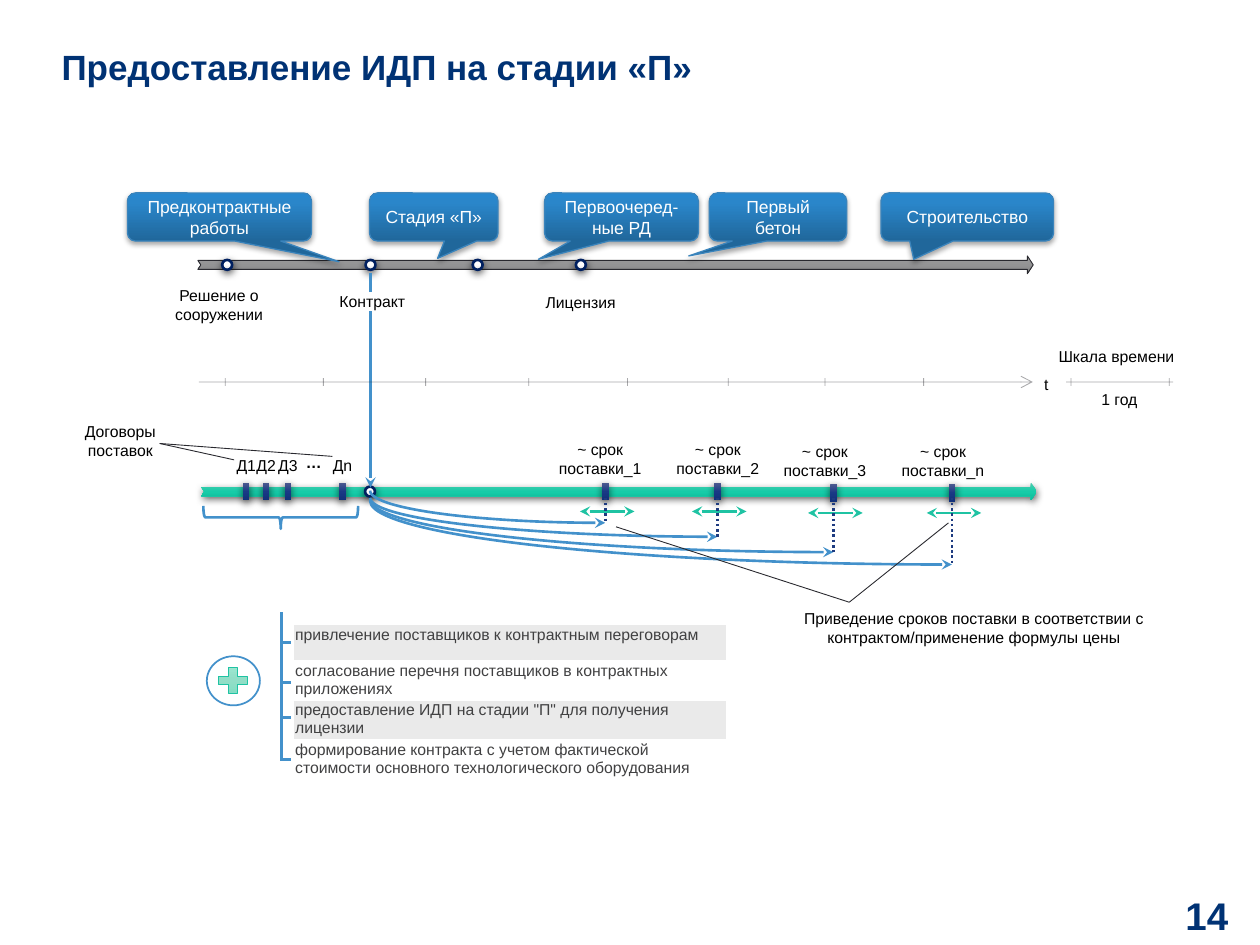
import pptx
import pptx.dml.color
import pptx.enum.dml
import pptx.enum.shapes
import pptx.enum.text
import pptx.oxml.ns
import pptx.util
from lxml import etree

Cm = pptx.util.Cm
Pt = pptx.util.Pt
qn = pptx.oxml.ns.qn
KIND = pptx.enum.shapes.MSO_SHAPE
ALIGN = pptx.enum.text.PP_ALIGN
ANCHOR = pptx.enum.text.MSO_ANCHOR

COLORS = {"title": "003274", "text": "000000", "white": "FFFFFF", "ink": "29292F",
          "navy": "002060", "blue": "4391CB", "callout": "3A84BC", "teal": "1FC3A3",
          "dots": "1E3B80", "cell_text": "414142", "band": "EAEAEA"}
GRADIENTS = {
    "gray": (90, [(0, "A0A0A1"), (50, "939394"), (100, "808081")]),
    "dot": (90, [(0, "FFFFFF"), (50, "FFFFFF"), (100, "E3E3E3")]),
    "callout": (270, [(0, "20679B"), (80, "2A86CA"), (100, "2787CE")]),
    "teal": (90, [(0, "4ECDAF"), (50, "17CBA8"), (100, "0DBC9A")]),
    "mark": (90, [(0, "4E5B90"), (50, "193985"), (100, "12317A")]),
    "plus": (90, [(0, "9EE8D2"), (50, "92DEC7"), (100, "7DDDC2")]),
}
DEEP_SHADOW = (63, 4.5, 1.5)
SOFT_SHADOW = (35, 3.1, 1.8)


def rgb(name):
    return pptx.dml.color.RGBColor.from_string(COLORS[name])


def add_color(parent, value, alpha=None):
    color = etree.SubElement(parent, qn("a:srgbClr"), val=value)
    if alpha:
        etree.SubElement(color, qn("a:alpha"), val=str(alpha * 1000))


def write(shape, text, size=9, color="text", bold=False, align=ALIGN.CENTER,
          anchor=ANCHOR.TOP, wrap=True, inset=0):
    frame = shape.text_frame
    frame.text = text
    frame.word_wrap = wrap
    frame.vertical_anchor = anchor
    if inset is not None:
        frame.margin_left = frame.margin_right = Cm(inset)
        frame.margin_top = frame.margin_bottom = Cm(inset)
    for para in frame.paragraphs:
        para.alignment = align
        for span in para.runs:
            span.font.name = "Arial"
            span.font.size = Pt(size)
            span.font.bold = bold
            span.font.color.rgb = rgb(color)


def add_label(page, left, top, width, text, height=0.38, **style):
    box = page.shapes.add_textbox(Cm(left), Cm(top), Cm(width), Cm(height))
    write(box, text, **style)
    return box


def add_ends(line_xml, head, tail):
    for tag, end in (("a:headEnd", head), ("a:tailEnd", tail)):
        if end:
            etree.SubElement(line_xml, qn(tag), type=end)


def add_shape(page, kind, left, top, width, height, gradient=None, line=None,
              weight=0.5, shadow=None, head=None):
    shape = page.shapes.add_shape(kind, Cm(left), Cm(top), Cm(width), Cm(height))
    shape.shadow.inherit = False
    properties = shape._element.spPr
    if gradient:
        angle, stops = GRADIENTS[gradient]
        shape.fill.gradient()
        stop_list = properties.find(".//" + qn("a:gsLst"))
        for old_stop in list(stop_list):
            stop_list.remove(old_stop)
        for position, value in stops:
            add_color(etree.SubElement(stop_list, qn("a:gs"), pos=str(position * 1000)), value)
        properties.find(".//" + qn("a:lin")).set("ang", str(angle * 60000))
    else:
        shape.fill.background()
    if line:
        shape.line.color.rgb = rgb(line)
        shape.line.width = Pt(weight)
        add_ends(properties.find(qn("a:ln")), head, None)
    else:
        shape.line.fill.background()
    if shadow:
        alpha, blur, distance = shadow
        outer = etree.SubElement(properties.find(qn("a:effectLst")), qn("a:outerShdw"),
                                 blurRad=str(Pt(blur)), dist=str(Pt(distance)),
                                 dir="5400000", rotWithShape="0")
        add_color(outer, "000000", alpha)
    return shape


def add_line(page, x1, y1, x2, y2, color="ink", weight=0.5, head=None, tail=None,
             dotted=False, alpha=None):
    line = page.shapes.add_connector(pptx.enum.shapes.MSO_CONNECTOR.STRAIGHT,
                                     Cm(x1), Cm(y1), Cm(x2), Cm(y2))
    line.line.color.rgb = rgb(color)
    line.line.width = Pt(weight)
    if dotted:
        line.line.dash_style = pptx.enum.dml.MSO_LINE.ROUND_DOT
    properties = line._element.spPr
    if alpha:
        etree.SubElement(properties.find(".//" + qn("a:srgbClr")), qn("a:alpha"),
                         val=str(alpha * 1000))
    add_ends(properties.find(qn("a:ln")), head, tail)
    etree.SubElement(properties, qn("a:effectLst"))


def add_dot(page, left, top):
    add_shape(page, KIND.OVAL, left, top, 0.2, 0.2, "dot", "navy", 1.5, DEEP_SHADOW)


def add_mark(page, center, top):
    add_shape(page, KIND.RECTANGLE, center - 0.06, top, 0.13, 0.36, "mark", shadow=DEEP_SHADOW)


def add_heading(page, left, top, width, height):
    title = page.shapes.title
    title.left, title.top, title.width, title.height = map(Cm, (left, top, width, height))
    write(title, "Предоставление ИДП на стадии «П»", 20, "title", True, ALIGN.LEFT, ANCHOR.MIDDLE)
    add_label(page, 23.01, 17.93, 1.75, "14", 1.04, size=22, color="title", bold=True,
              align=ALIGN.RIGHT, anchor=ANCHOR.MIDDLE)


def add_phases(page, left, top):
    add_shape(page, KIND.NOTCHED_RIGHT_ARROW, left + 1.42, top + 1.27, 16.84, 0.36,
              "gray", "ink").adjustments[1] = 0.33
    for x in (1.91, 4.8, 6.96, 9.04):
        add_dot(page, left + x, top + 1.35)
    add_label(page, left + 0.74, top + 1.88, 2.21, "Решение о сооружении", 0.76)
    add_label(page, left + 8.26, top + 2.01, 1.75, "Лицензия")
    for x, width, tip_x, tip_y, text in (
            (0, 3.71, 0.65, 0.93, "Предконтрактные работы"),
            (4.88, 2.59, 0.03, 0.86, "Стадия «П»"),
            (8.41, 3.1, -0.54, 0.88, "Первоочеред-ные РД"),
            (11.73, 2.77, -0.65, 0.81, "Первый бетон"),
            (15.19, 3.48, -0.31, 0.88, "Строительство")):
        callout = add_shape(page, KIND.ROUNDED_RECTANGULAR_CALLOUT, left + x, top, width, 0.97,
                            "callout", "callout", 0.75, SOFT_SHADOW)
        callout.adjustments[0] = tip_x
        callout.adjustments[1] = tip_y
        write(callout, text, 10, "white", anchor=ANCHOR.MIDDLE, inset=None)


def add_axis(page, left, y, width, ticks, tail=None):
    add_line(page, left, y, left + width, y, alpha=40, tail=tail)
    for x in ticks:
        add_line(page, left + x, y - 0.08, left + x, y + 0.08, alpha=40)


def add_time_scale(page, left, y, width):
    add_axis(page, left, y, width, (0.53, 2.51, 4.57, 6.65, 8.64, 10.67, 12.62, 14.61), "arrow")
    add_label(page, left + width + 0.11, y - 0.15, 0.33, "t")
    legend = left + width + 0.67
    add_axis(page, legend, y, 2.16, (0.1, 2.08))
    add_label(page, legend - 0.15, y - 0.71, 2.44, "Шкала времени", align=ALIGN.LEFT, wrap=False)
    add_label(page, legend + 0.2, y + 0.15, 1.75, "1 год")


def add_deliveries(page, left, top, width):
    add_shape(page, KIND.NOTCHED_RIGHT_ARROW, left, top, width, 0.36, "teal",
              shadow=DEEP_SHADOW).adjustments[1] = 0.33
    add_dot(page, left + 3.3, top + 0.08)
    for x, text in ((0.9, "Д1"), (1.3, "Д2"), (1.74, "Д3"), (2.84, "Дn")):
        add_mark(page, left + x, top)
        add_label(page, left + x - 0.2, top - 0.55, 0.41, text, wrap=False)
    add_label(page, left + 2.06, top - 0.61, 0.41, "…", bold=True, wrap=False)
    add_label(page, left - 2.51, top - 1.22, 1.75, "Договоры поставок", 0.76)
    for x, y in ((2.64, -0.53), (0.66, -0.46)):
        add_line(page, left - 0.84, top - 0.79, left + x, top + y)
    for x, label_x, shift, drop, arc_height, name in (
            (8.14, 8.04, 0, 0.81, 1.3, "1"), (10.4, 10.41, 0, 1.09, 1.57, "2"),
            (12.74, 12.57, 0.03, 1.4, 2.13, "3"), (15.13, 14.95, 0.03, 1.65, 2.57, "n")):
        add_mark(page, left + x, top + shift)
        add_label(page, left + label_x - 0.95, top - 0.86 + shift, 1.9,
                  "~ срок поставки_" + name, 0.76)
        add_line(page, left + x - 0.51, top + 0.58 + shift, left + x + 0.59, top + 0.58 + shift,
                 "teal", 1.5, "stealth", "stealth")
        arc = add_shape(page, KIND.ARC, left + 3.4, top + drop - arc_height, 2 * (x - 3.4),
                        arc_height, line="blue", weight=1.5, head="stealth")
        arc.rotation = 180
        add_line(page, left + x, top + 0.3, left + x, top + drop, "dots", 1.5, dotted=True)
    brace = add_shape(page, KIND.LEFT_BRACE, left + 1.37, top - 0.86, 0.46, 3.12,
                      line="blue", weight=1.5)
    brace.rotation = 270
    for x, y in ((8.36, 0.89), (15.06, 0.81)):
        add_line(page, left + x, top + y, left + 13.06, top + 2.41)
    add_label(page, left + 11.81, top + 2.54, 7.52, "Приведение сроков поставки в соответствии "
              "с контрактом/применение формулы цены", 0.76)


def add_contract_link(page, x, top, height):
    add_line(page, x, top, x, top + height, "blue", 1.5, tail="stealth")
    box = add_label(page, x - 0.84, top + 0.38, 1.75, "Контракт")
    box.fill.solid()
    box.fill.fore_color.rgb = rgb("white")


def add_benefits(page, left, top):
    add_line(page, left + 1.5, top, left + 1.5, top + 3, "blue", 1.5)
    benefits = ("привлечение поставщиков к контрактным переговорам",
                "согласование перечня поставщиков в контрактных приложениях",
                "предоставление ИДП на стадии \"П\" для получения лицензии",
                "формирование контракта с учетом фактической стоимости основного "
                "технологического оборудования")
    table = page.shapes.add_table(len(benefits), 1, Cm(left + 1.75), Cm(top + 0.25),
                                  Cm(8.74), Cm(2.92)).table
    table.first_row = table.horz_banding = False
    for row, (text, tick) in enumerate(zip(benefits, (0.61, 1.42, 2.13, 2.97))):
        cell = table.cell(row, 0)
        write(cell, text, color="cell_text", align=ALIGN.LEFT, anchor=ANCHOR.MIDDLE)
        cell.margin_left = cell.margin_right = cell.margin_top = Cm(0.03)
        cell.margin_bottom = cell.text_frame.margin_bottom = Cm(0)
        if row % 2 == 0:
            cell.fill.solid()
            cell.fill.fore_color.rgb = rgb("band")
        else:
            cell.fill.background()
        add_line(page, left + 1.5, top + tick, left + 1.7, top + tick, "blue", 1.5)
    add_shape(page, KIND.MATH_PLUS, left + 0.13, top + 1.02, 0.79, 0.71, "plus", "teal")
    add_shape(page, KIND.OVAL, left, top + 0.89, 1.07, 0.99, line="blue", weight=1)


def main():
    deck = pptx.Presentation()
    deck.slide_width, deck.slide_height = Cm(25.4), Cm(19.05)
    page = deck.slides.add_slide(deck.slide_layouts[5])
    add_heading(page, 1.24, 0, 20.98, 2.67)
    add_phases(page, 2.57, 3.89)
    add_deliveries(page, 4.06, 9.73, 16.84)
    add_contract_link(page, 7.47, 5.51, 4.32)
    add_time_scale(page, 4.01, 7.7, 16.81)
    add_benefits(page, 4.17, 12.34)
    deck.save("out.pptx")


if __name__ == "__main__":
    main()
